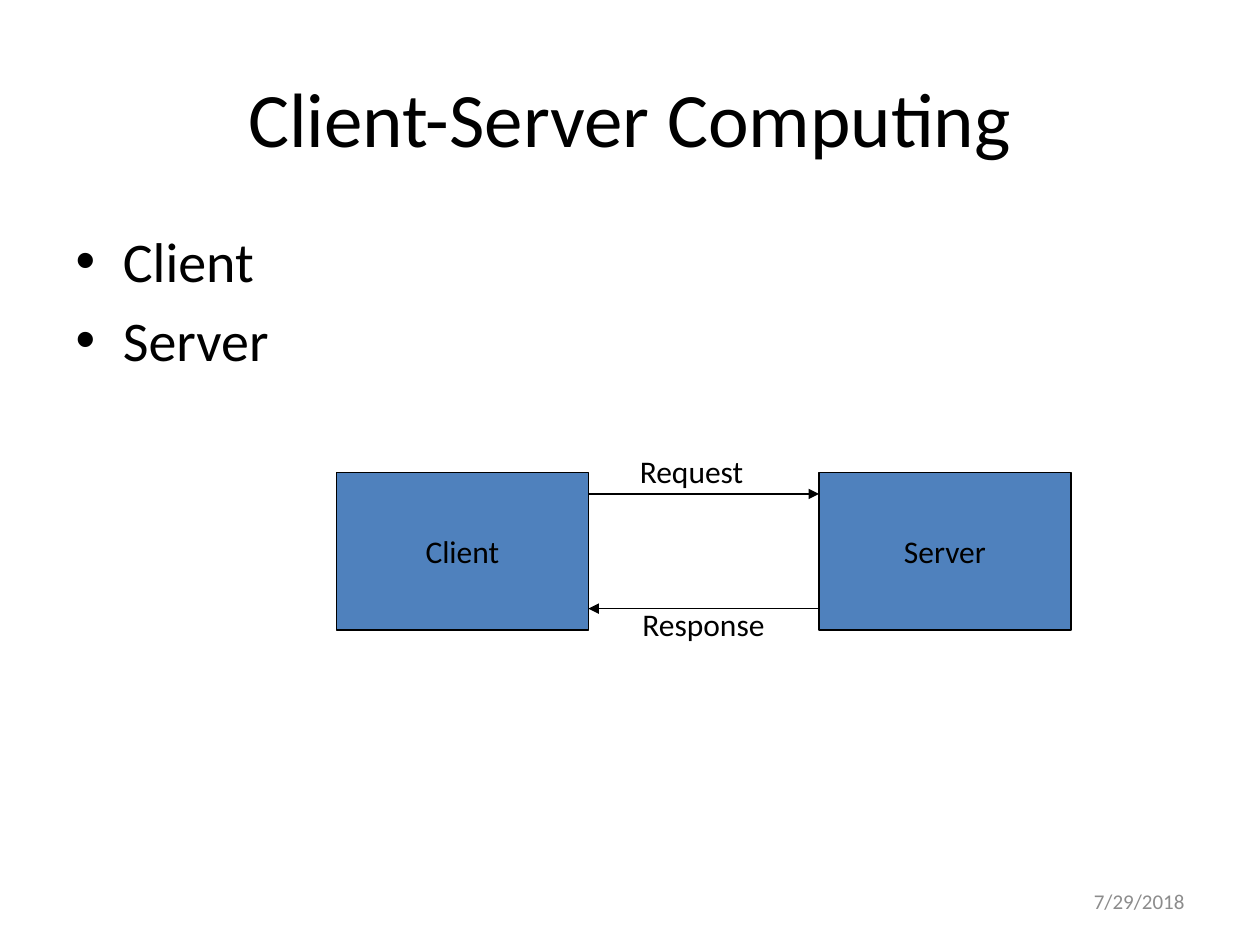
from dataclasses import dataclass

from lxml.etree import SubElement
from pptx import Presentation
from pptx.dml.color import RGBColor
from pptx.enum.shapes import MSO_CONNECTOR, MSO_SHAPE
from pptx.enum.text import MSO_ANCHOR, PP_ALIGN
from pptx.oxml.ns import qn
from pptx.slide import Slide
from pptx.text.text import TextFrame
from pptx.util import Inches, Pt

COLORS = {"text": "000000", "box": "4F81BD", "line": "000000", "date": "8C8C8C"}
FONT = "Calibri"
BOX_TOP, BOX_WIDTH, BOX_HEIGHT = 3.75, 2, 1.25
CLIENT_LEFT, SERVER_LEFT = 2.67, 6.5
CLIENT_RIGHT = CLIENT_LEFT + BOX_WIDTH


@dataclass
class Box:
    text: str
    left: float


@dataclass
class Arrow:
    start: float
    end: float
    y: float


@dataclass
class Label:
    text: str
    left: float
    top: float
    width: float
    size: int = 18
    color: str = "text"
    align: PP_ALIGN = PP_ALIGN.LEFT
    anchor: MSO_ANCHOR = MSO_ANCHOR.TOP
    wrap: bool = False


BOXES = [Box("Client", CLIENT_LEFT), Box("Server", SERVER_LEFT)]
ARROWS = [Arrow(CLIENT_RIGHT, SERVER_LEFT, 3.92), Arrow(SERVER_LEFT, CLIENT_RIGHT, 4.83)]
LABELS = [
    Label("Request", 4.98, 3.54, 1.13),
    Label("Response", 5, 4.75, 1.33),
    Label("7/29/2018", 7.17, 6.95, 2.33, 12, "date", PP_ALIGN.RIGHT, MSO_ANCHOR.MIDDLE, True),
]


def color(name: str) -> RGBColor:
    return RGBColor.from_string(COLORS[name])


def write(text_frame: TextFrame, text: str, size: int, color_name: str = "text",
          align: PP_ALIGN | None = None) -> None:
    text_frame.text = text
    for paragraph in text_frame.paragraphs:
        if align is not None:
            paragraph.alignment = align
        for run in paragraph.runs:
            run.font.name = FONT
            run.font.size = Pt(size)
            run.font.color.rgb = color(color_name)


def fill_placeholder(slide: Slide, index: int, text: str, size: int,
                     top: float, height: float) -> None:
    shape = slide.placeholders[index]
    shape.left, shape.top = Inches(0.5), Inches(top)
    shape.width, shape.height = Inches(9), Inches(height)
    write(shape.text_frame, text, size)


def draw_box(slide: Slide, box: Box) -> None:
    shape = slide.shapes.add_shape(MSO_SHAPE.RECTANGLE, Inches(box.left), Inches(BOX_TOP),
                                   Inches(BOX_WIDTH), Inches(BOX_HEIGHT))
    shape.shadow.inherit = False
    shape.fill.solid()
    shape.fill.fore_color.rgb = color("box")
    shape.line.color.rgb = color("line")
    shape.line.width = Pt(0.75)
    shape.text_frame.word_wrap = False
    shape.text_frame.vertical_anchor = MSO_ANCHOR.MIDDLE
    write(shape.text_frame, box.text, 18, align=PP_ALIGN.CENTER)


def draw_arrow(slide: Slide, arrow: Arrow) -> None:
    connector = slide.shapes.add_connector(
        MSO_CONNECTOR.STRAIGHT, Inches(arrow.start), Inches(arrow.y),
        Inches(arrow.end), Inches(arrow.y))
    connector.line.color.rgb = color("line")
    connector.line.width = Pt(0.75)
    # Arrowhead at the end, no theme shadow
    SubElement(connector.line._get_or_add_ln(), qn("a:tailEnd"), type="triangle")
    SubElement(connector._element.spPr, qn("a:effectLst"))


def draw_label(slide: Slide, label: Label) -> None:
    shape = slide.shapes.add_textbox(Inches(label.left), Inches(label.top),
                                     Inches(label.width), Inches(0.4))
    shape.text_frame.word_wrap = label.wrap
    shape.text_frame.vertical_anchor = label.anchor
    write(shape.text_frame, label.text, label.size, label.color, label.align)


def main() -> None:
    presentation = Presentation()
    presentation.slide_width, presentation.slide_height = Inches(10), Inches(7.5)
    slide = presentation.slides.add_slide(presentation.slide_layouts[1])

    # Title and list
    fill_placeholder(slide, 0, "Client-Server Computing", 44, 0.3, 1.25)
    fill_placeholder(slide, 1, "Client\nServer", 32, 1.75, 4.95)

    # Request and response diagram, then the date
    for box in BOXES:
        draw_box(slide, box)
    for arrow in ARROWS:
        draw_arrow(slide, arrow)
    for label in LABELS:
        draw_label(slide, label)

    presentation.save("out.pptx")


if __name__ == "__main__":
    main()
